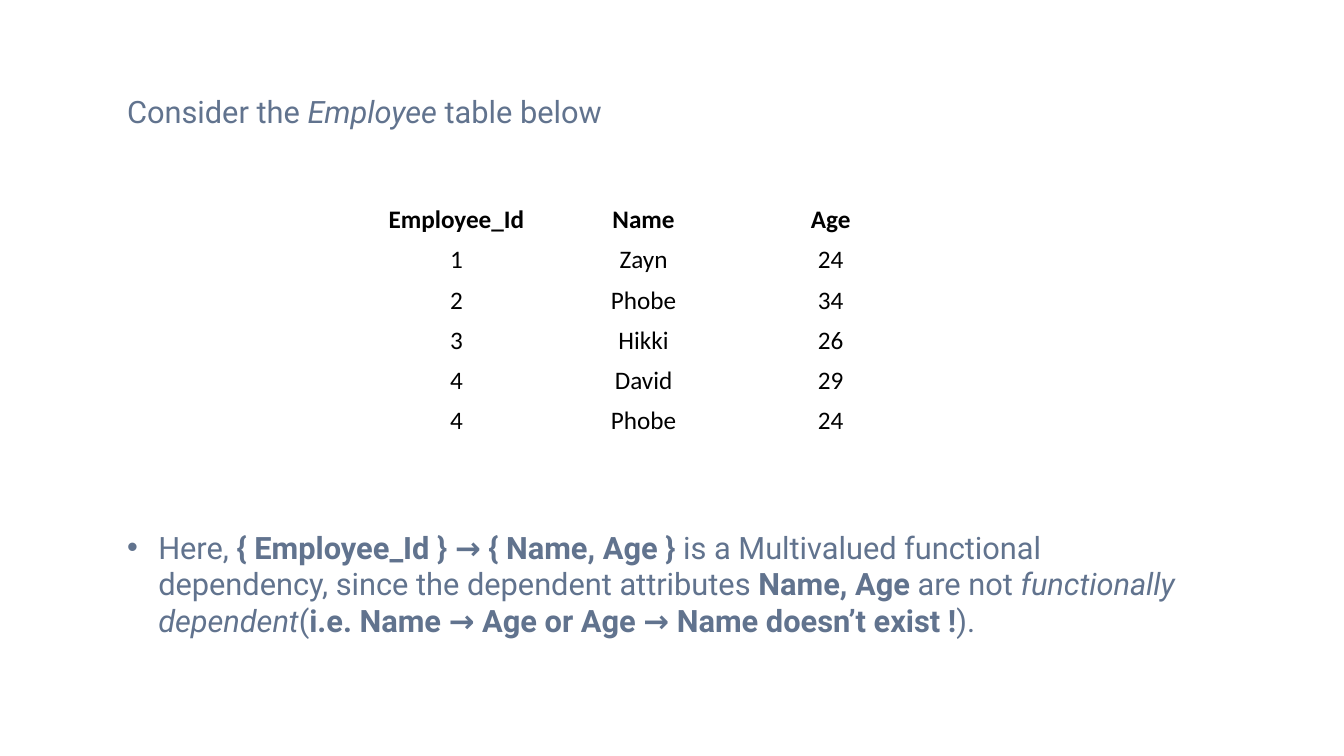
"""Build a slide that explains a multivalued dependency with an Employee table."""

from dataclasses import dataclass

from pptx import Presentation
from pptx.dml.color import RGBColor
from pptx.enum.text import MSO_ANCHOR as Anchor
from pptx.enum.text import MSO_AUTO_SIZE as AutoSize
from pptx.enum.text import PP_ALIGN as Align
from pptx.shapes.placeholder import SlidePlaceholder
from pptx.slide import Slide
from pptx.text.text import _Paragraph as Paragraph
from pptx.util import Inches, Pt

GRID_COLUMNS, GRID_ROWS = 160, 90
SLIDE_WIDTH, SLIDE_HEIGHT = Inches(13.33), Inches(7.5)
COLORS = {"prose": "61738E", "table": "000000"}


@dataclass(frozen=True)
class Box:
    column: float
    row: float
    columns: float
    rows: float

    def lengths(self) -> tuple[int, int, int, int]:
        return (
            round(SLIDE_WIDTH * self.column / GRID_COLUMNS),
            round(SLIDE_HEIGHT * self.row / GRID_ROWS),
            round(SLIDE_WIDTH * self.columns / GRID_COLUMNS),
            round(SLIDE_HEIGHT * self.rows / GRID_ROWS),
        )


@dataclass(frozen=True)
class Style:
    font: str
    size: int
    color: str


@dataclass(frozen=True)
class Piece:
    text: str
    bold: bool = False
    italic: bool = False


PROSE = Style("Roboto", 22, "prose")
TABLE = Style("Calibri", 18, "table")

TITLE_BOX = Box(13.92, 10.44, 80, 5.64)
TABLE_BOX = Box(43.2, 23.76, 66.84, 28.8)
BODY_BOX = Box(13.92, 62.28, 127.92, 14.52)

TITLE = [
    Piece("Consider the "),
    Piece("Employee", italic=True),
    Piece(" table below"),
]
BODY = [
    Piece("Here, "),
    Piece("{ Employee_Id } → { Name, Age }", bold=True),
    Piece(" is a Multivalued functional dependency, since the dependent attributes "),
    Piece("Name, Age", bold=True),
    Piece(" are not "),
    Piece("functionally dependent", italic=True),
    Piece("("),
    Piece("i.e. Name → Age or Age → Name doesn’t exist !", bold=True),
    Piece(")."),
]
EMPLOYEES = [
    ("Employee_Id", "Name", "Age"),
    ("1", "Zayn", "24"),
    ("2", "Phobe", "34"),
    ("3", "Hikki", "26"),
    ("4", "David", "29"),
    ("4", "Phobe", "24"),
]


def add_runs(paragraph: Paragraph, pieces: list[Piece], style: Style) -> None:
    for piece in pieces:
        run = paragraph.add_run()
        run.text = piece.text
        run.font.name = style.font
        run.font.size = Pt(style.size)
        run.font.bold = piece.bold
        run.font.italic = piece.italic
        run.font.color.rgb = RGBColor.from_string(COLORS[style.color])


def fill_placeholder(shape: SlidePlaceholder, box: Box, pieces: list[Piece]) -> Paragraph:
    shape.left, shape.top, shape.width, shape.height = box.lengths()
    frame = shape.text_frame
    frame.word_wrap = True
    frame.auto_size = AutoSize.SHAPE_TO_FIT_TEXT
    paragraph = frame.paragraphs[0]
    paragraph.alignment = Align.LEFT
    paragraph.space_before = Pt(0)
    add_runs(paragraph, pieces, PROSE)
    return paragraph


def add_employee_table(slide: Slide) -> None:
    shape = slide.shapes.add_table(len(EMPLOYEES), len(EMPLOYEES[0]), *TABLE_BOX.lengths())
    table = shape.table
    table.first_row = False
    table.horz_banding = False
    for row_index, employee in enumerate(EMPLOYEES):
        for column_index, value in enumerate(employee):
            cell = table.cell(row_index, column_index)
            cell.fill.background()
            cell.vertical_anchor = Anchor.MIDDLE
            cell.margin_top = cell.margin_bottom = Inches(0.03)
            paragraph = cell.text_frame.paragraphs[0]
            paragraph.alignment = Align.CENTER
            add_runs(paragraph, [Piece(value, bold=row_index == 0)], TABLE)


def main() -> None:
    presentation = Presentation()
    presentation.slide_width, presentation.slide_height = SLIDE_WIDTH, SLIDE_HEIGHT
    slide = presentation.slides.add_slide(presentation.slide_layouts[1])
    fill_placeholder(slide.shapes.title, TITLE_BOX, TITLE)
    add_employee_table(slide)
    bullet = fill_placeholder(slide.placeholders[1], BODY_BOX, BODY)
    properties = bullet._p.get_or_add_pPr()
    properties.set("marL", str(Inches(0.31)))
    properties.set("indent", str(-Inches(0.31)))
    presentation.save("out.pptx")


if __name__ == "__main__":
    main()
